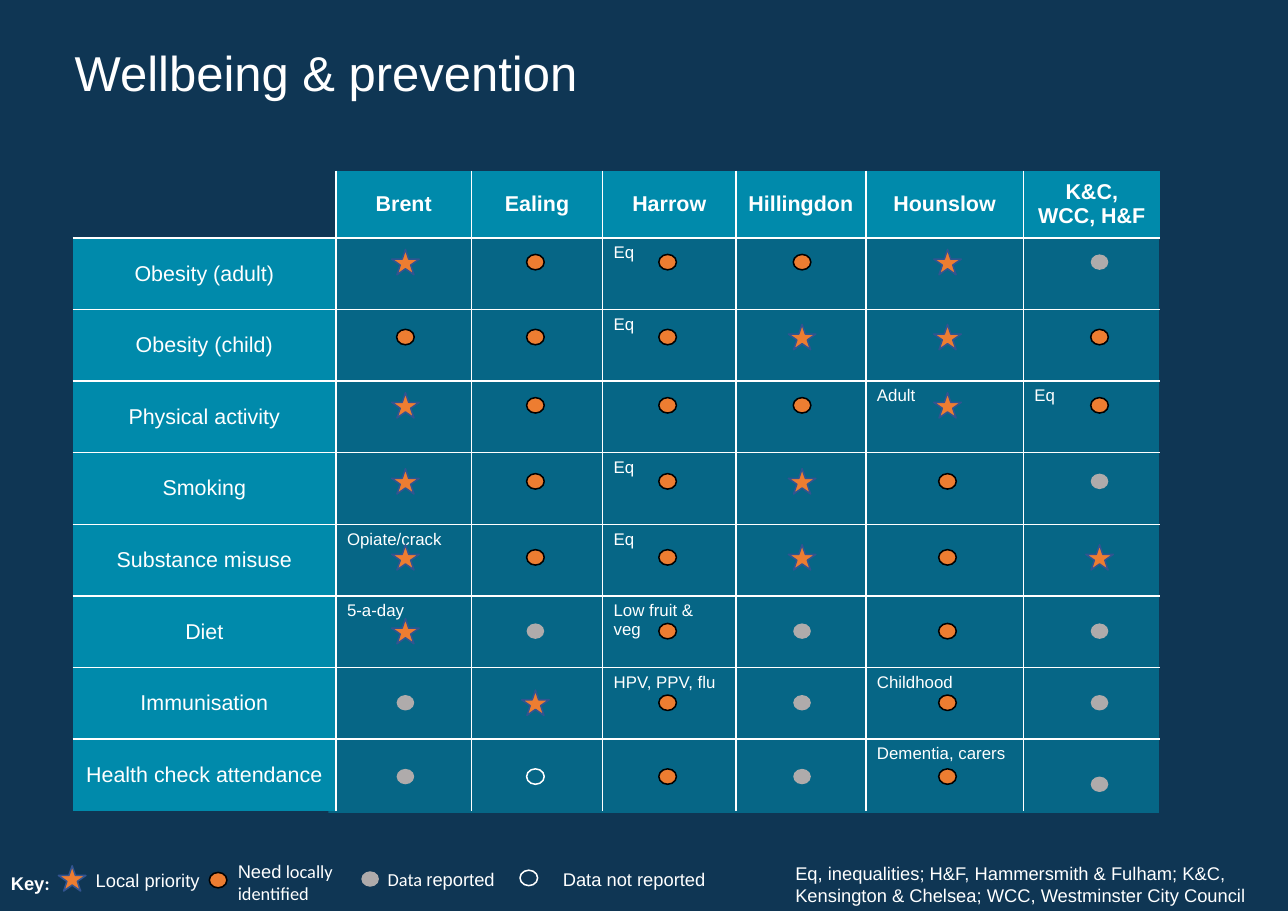
from dataclasses import dataclass
from itertools import product

from lxml import etree
from pptx import Presentation
from pptx.dml.color import RGBColor
from pptx.enum.shapes import MSO_SHAPE
from pptx.enum.text import MSO_ANCHOR, PP_ALIGN
from pptx.oxml.ns import qn
from pptx.util import Inches, Pt

RECTANGLE, STAR, DOT = MSO_SHAPE.RECTANGLE, MSO_SHAPE.STAR_5_POINT, MSO_SHAPE.FLOWCHART_CONNECTOR
MIDDLE, TOP = MSO_ANCHOR.MIDDLE, MSO_ANCHOR.TOP
LEFT, CENTER = PP_ALIGN.LEFT, PP_ALIGN.CENTER


@dataclass(frozen=True)
class Theme:
    navy: str = "0F3654"
    teal: str = "008AAB"
    white: str = "FFFFFF"
    black: str = "000000"
    orange: str = "ED7D31"
    grey: str = "AFABAB"
    star_edge: str = "325491"
    font: str = "Arial"
    alt_font: str = "Calibri"
    title: int = 32
    heading: int = 14
    legend: int = 12
    note: int = 11


THEME = Theme()

# Marker code: shape, width, height, fill, outline
MARKERS = {
    "P": (STAR, 0.25, 0.23, THEME.orange, THEME.star_edge),
    "N": (DOT, 0.16, 0.14, THEME.orange, THEME.black),
    "D": (DOT, 0.16, 0.14, THEME.grey, None),
    "X": (DOT, 0.16, 0.14, None, THEME.white),
}

BOROUGHS = ["Brent", "Ealing", "Harrow", "Hillingdon", "Hounslow", "K&C, WCC, H&F"]
COLUMN_WIDTHS = [2.39, 1.23, 1.19, 1.21, 1.18, 1.43, 1.24]
HEADER_HEIGHT, ROW_HEIGHT = 0.61, 0.65
MARKER_X = [3.68, 4.86, 6.06, 7.28, 8.6, 9.98]

# Topic, marker centre, one marker code per borough, notes by borough
TOPICS = [
    ("Obesity (adult)", 2.38, "PNNNPD", {"Harrow": "Eq"}),
    ("Obesity (child)", 3.06, "NNNPPN", {"Harrow": "Eq"}),
    ("Physical activity", 3.68, "PNNNPN", {"Hounslow": "Adult", "K&C, WCC, H&F": "Eq"}),
    ("Smoking", 4.37, "PNNPND", {"Harrow": "Eq"}),
    ("Substance misuse", 5.06, "PNNPNP", {"Brent": "Opiate/crack", "Harrow": "Eq"}),
    ("Diet", 5.73, "PDNDND", {"Brent": "5-a-day", "Harrow": "Low fruit & veg"}),
    ("Immunisation", 6.38, "DPNDND", {"Harrow": "HPV, PPV, flu", "Hounslow": "Childhood"}),
    ("Health check attendance", 7.05, "DXNDND", {"Hounslow": "Dementia, carers"}),
]
LOWERED_MARKER = ("Health check attendance", "K&C, WCC, H&F", 0.07)

LEGEND_MARKERS = [("P", 0.655, 7.975), ("N", 1.98, 7.99), ("D", 3.36, 7.98), ("X", 4.8, 7.97)]
LEGEND_TEXTS = [
    ((0.77, 7.84, 1.16, 0.3), [("Local priority", THEME.font)]),
    ((2.06, 7.76, 1.16, 0.5), [("Need", THEME.font), (" locally identified", THEME.alt_font)]),
    ((3.42, 7.83, 1.92, 0.3), [("Data ", THEME.alt_font), ("reported", THEME.font)]),
    ((5.01, 7.83, 1.92, 0.3), [("Data not reported", THEME.font)]),
    ((7.12, 7.78, 4.43, 0.5), [(
        "Eq, inequalities; H&F, Hammersmith & Fulham; K&C, Kensington & Chelsea; "
        "WCC, Westminster City Council", THEME.font)]),
]


def colour(value):
    return RGBColor.from_string(value)


def style_font(font, size, bold=False):
    font.name = THEME.font
    font.size = Pt(size)
    font.bold = bold
    font.color.rgb = colour(THEME.white)


def add_shape(slide, kind, box, fill, outline=None):
    shape = slide.shapes.add_shape(kind, *map(Inches, box))
    shape.shadow.inherit = False
    if fill:
        shape.fill.solid()
        shape.fill.fore_color.rgb = colour(fill)
    else:
        shape.fill.background()
    if outline:
        shape.line.color.rgb = colour(outline)
        shape.line.width = Pt(1)
    else:
        shape.line.fill.background()
    return shape


def add_marker(slide, code, x, y):
    """Draw the marker for a code, centred on x, y."""
    kind, width, height, fill, outline = MARKERS[code]
    add_shape(slide, kind, (x - width / 2, y - height / 2, width, height), fill, outline)


def add_text(slide, box, pieces, size, bold=False):
    """Add one paragraph made of (text, font name) pieces."""
    frame = slide.shapes.add_textbox(*map(Inches, box)).text_frame
    frame.word_wrap = True
    paragraph = frame.paragraphs[0]
    style_font(paragraph.font, size, bold)
    for text, font_name in pieces:
        run = paragraph.add_run()
        run.text = text
        if font_name != THEME.font:
            run.font.name = font_name
    return paragraph


def set_borders(cell, shown):
    """Draw the sides named in shown (from L, R, T, B) and hide the others."""
    properties = cell._tc.get_or_add_tcPr()
    for index, side in enumerate("LRTB"):
        line = etree.Element(qn(f"a:ln{side}"), w=str(Pt(1)))
        if side in shown:
            fill = etree.SubElement(line, qn("a:solidFill"))
            etree.SubElement(fill, qn("a:srgbClr"), val=THEME.white)
        else:
            etree.SubElement(line, qn("a:noFill"))
        properties.insert(index, line)


def fill_cell(cell, text, heading, is_header):
    if heading and text:
        cell.fill.solid()
        cell.fill.fore_color.rgb = colour(THEME.teal)
    else:
        cell.fill.background()
    cell.vertical_anchor = MIDDLE if heading else TOP
    cell.text = text
    paragraph = cell.text_frame.paragraphs[0]
    paragraph.alignment = CENTER if heading else LEFT
    style_font(paragraph.font, THEME.heading if heading else THEME.note, is_header)


def add_matrix(slide):
    rows = [["", *BOROUGHS]]
    rows += [[topic, *(notes.get(name, "") for name in BOROUGHS)] for topic, _, _, notes in TOPICS]
    last_row, last_column = len(rows) - 1, len(BOROUGHS)
    height = HEADER_HEIGHT + ROW_HEIGHT * last_row
    box = (0.66, 1.55, sum(COLUMN_WIDTHS), height)
    table = slide.shapes.add_table(len(rows), last_column + 1, *map(Inches, box)).table
    table.horz_banding = False
    for column, width in zip(table.columns, COLUMN_WIDTHS):
        column.width = Inches(width)
    for r, row in enumerate(table.rows):
        row.height = Inches(ROW_HEIGHT if r else HEADER_HEIGHT)
    for r, c in product(range(last_row + 1), range(last_column + 1)):
        cell = table.cell(r, c)
        fill_cell(cell, rows[r][c], r == 0 or c == 0, r == 0)
        inner = {"L": c > 0, "R": c < last_column, "T": r > 0, "B": r < last_row}
        set_borders(cell, [side for side, shown in inner.items() if shown])


def add_topic_markers(slide):
    lowered_topic, lowered_borough, drop = LOWERED_MARKER
    for topic, y, codes, _ in TOPICS:
        for borough, x, code in zip(BOROUGHS, MARKER_X, codes):
            lowered = (topic, borough) == (lowered_topic, lowered_borough)
            add_marker(slide, code, x, y + drop if lowered else y)


def add_legend(slide):
    add_text(slide, (0, 7.87, 1.56, 0.3), [("Key", THEME.font), (":", THEME.alt_font)],
             THEME.legend, bold=True)
    for box, pieces in LEGEND_TEXTS:
        add_text(slide, box, pieces, THEME.legend)
    for marker in LEGEND_MARKERS:
        add_marker(slide, *marker)


def main():
    deck = Presentation()
    deck.slide_width, deck.slide_height = Inches(11.69), Inches(8.27)
    slide = deck.slides.add_slide(deck.slide_layouts[6])
    slide.background.fill.solid()
    slide.background.fill.fore_color.rgb = colour(THEME.navy)

    panel = add_shape(slide, RECTANGLE, (2.98, 2.16, 7.54, 5.22), THEME.teal)
    panel_colour = panel._element.spPr.find(f".//{qn('a:srgbClr')}")
    etree.SubElement(panel_colour, qn("a:alpha"), val="58000")

    add_matrix(slide)
    title = add_text(slide, (0.58, 0.4, 7.82, 1.6), [("Wellbeing & prevention", THEME.font)], THEME.title)
    title.line_spacing = 0.9
    add_legend(slide)
    add_topic_markers(slide)
    deck.save("out.pptx")


if __name__ == "__main__":
    main()
